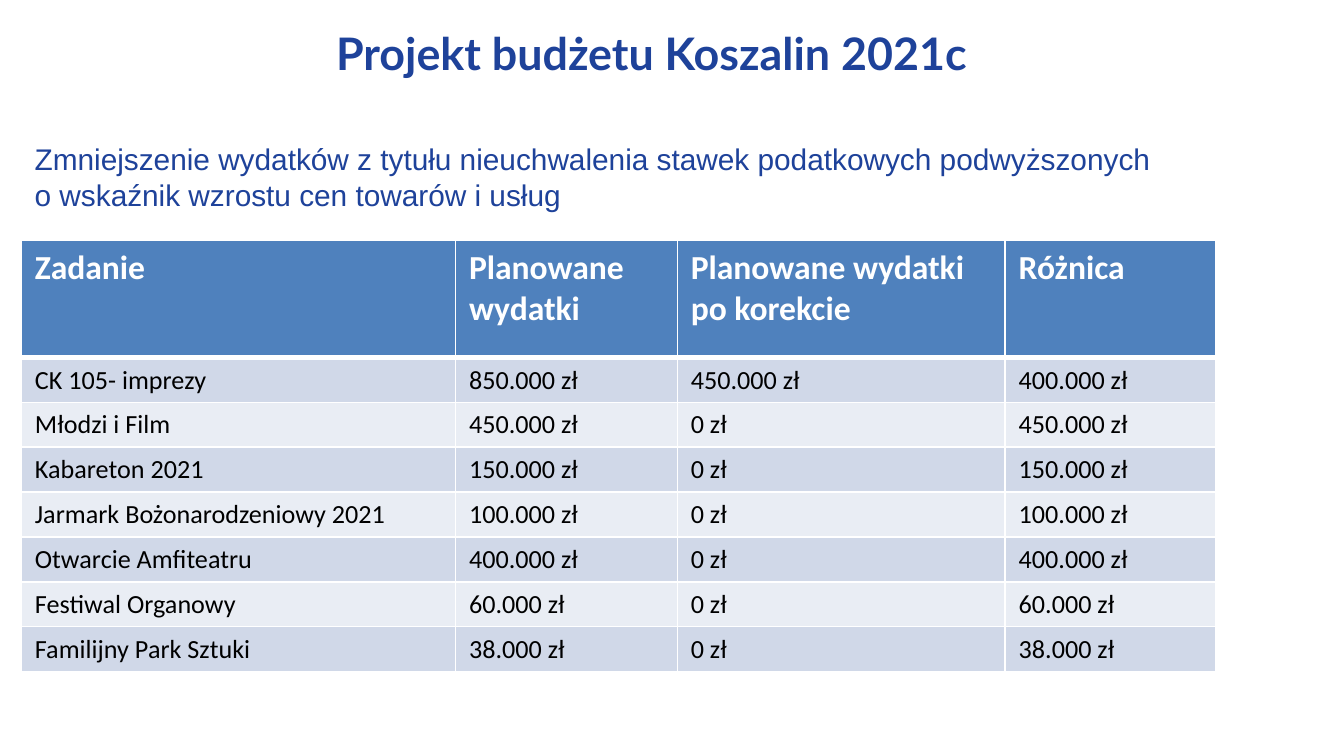
from lxml.etree import SubElement
from pptx import Presentation
from pptx.dml.color import RGBColor
from pptx.enum.text import MSO_ANCHOR as Anchor, MSO_AUTO_SIZE as AutoSize, PP_ALIGN as Align
from pptx.oxml.ns import qn
from pptx.util import Inches, Pt

NAVY = RGBColor(0x1E, 0x42, 0x9A)
BLUE = RGBColor(0x4F, 0x81, 0xBD)
BAND_DARK = RGBColor(0xD0, 0xD8, 0xE8)
BAND_LIGHT = RGBColor(0xE9, 0xED, 0xF4)
WHITE = RGBColor(0xFF, 0xFF, 0xFF)
BLACK = RGBColor(0, 0, 0)

TITLE_FORMAT = {"name": "Lato", "size": Pt(24), "bold": True, "color": NAVY}
SUBTITLE_FORMAT = {"name": "Arial", "size": Pt(16), "bold": False, "color": NAVY}
HEADER_FORMAT = {"name": "Calibri", "size": Pt(18), "bold": True, "color": WHITE}
BODY_FORMAT = {"name": "Calibri", "size": Pt(14), "bold": False, "color": BLACK}

COLUMN_WIDTHS = [3.23, 1.65, 2.44, 1.57]
HEADER_HEIGHT = 0.87
EXPENSES = [
    ("Zadanie", "Planowane wydatki", "Planowane wydatki po korekcie", "Różnica"),
    ("CK 105- imprezy", "850.000 zł", "450.000 zł", "400.000 zł"),
    ("Młodzi i Film", "450.000 zł", "0 zł", "450.000 zł"),
    ("Kabareton 2021", "150.000 zł", "0 zł", "150.000 zł"),
    ("Jarmark Bożonarodzeniowy 2021", "100.000 zł", "0 zł", "100.000 zł"),
    ("Otwarcie Amfiteatru", "400.000 zł", "0 zł", "400.000 zł"),
    ("Festiwal Organowy", "60.000 zł", "0 zł", "60.000 zł"),
    ("Familijny Park Sztuki", "38.000 zł", "0 zł", "38.000 zł"),
]


def write_text(text_frame, text, text_format):
    text_frame.text = text
    for paragraph in text_frame.paragraphs:
        paragraph.alignment = Align.LEFT
        for run in paragraph.runs:
            for attribute, value in text_format.items():
                if attribute == "color":
                    run.font.color.rgb = value
                else:
                    setattr(run.font, attribute, value)


def add_title(slide, left, top, width, height):
    title = slide.shapes.title
    title.left, title.top = Inches(left), Inches(top)
    title.width, title.height = Inches(width), Inches(height)
    write_text(title.text_frame, "Projekt budżetu Koszalin 2021c", TITLE_FORMAT)
    title.text_frame.word_wrap = True
    title.text_frame.vertical_anchor = Anchor.TOP
    title.text_frame.auto_size = AutoSize.SHAPE_TO_FIT_TEXT


def add_subtitle(slide, left, top, width, height):
    box = slide.shapes.add_textbox(Inches(left), Inches(top), Inches(width), Inches(height))
    box.text_frame.word_wrap = True
    write_text(
        box.text_frame,
        "Zmniejszenie wydatków z tytułu nieuchwalenia stawek podatkowych podwyższonych \v"
        "o wskaźnik wzrostu cen towarów i usług",
        SUBTITLE_FORMAT,
    )


def set_borders(cell, widths):
    properties = cell._tc.get_or_add_tcPr()
    for side, width in zip("LRTB", widths):
        line = SubElement(properties, qn(f"a:ln{side}"), w=str(Pt(width)))
        fill = SubElement(line, qn("a:solidFill"))
        SubElement(fill, qn("a:srgbClr"), val=str(WHITE))


def add_expense_table(slide, left, top, width, height):
    table = slide.shapes.add_table(
        len(EXPENSES), len(COLUMN_WIDTHS),
        Inches(left), Inches(top), Inches(width), Inches(height),
    ).table
    for column, column_width in zip(table.columns, COLUMN_WIDTHS):
        column.width = Inches(column_width)
    body_height = (height - HEADER_HEIGHT) / (len(EXPENSES) - 1)
    for row_index, values in enumerate(EXPENSES):
        is_header = row_index == 0
        table.rows[row_index].height = Inches(HEADER_HEIGHT if is_header else body_height)
        band = BAND_DARK if row_index % 2 else BAND_LIGHT
        top_width = 3 if row_index == 1 else 1
        bottom_width = 3 if is_header else 1
        for column_index, value in enumerate(values):
            cell = table.cell(row_index, column_index)
            write_text(cell.text_frame, value, HEADER_FORMAT if is_header else BODY_FORMAT)
            set_borders(cell, (1, 1, top_width, bottom_width))
            cell.fill.solid()
            cell.fill.fore_color.rgb = BLUE if is_header else band


def main():
    presentation = Presentation()
    presentation.slide_width = Inches(10)
    presentation.slide_height = presentation.slide_width * 9 // 16
    slide = presentation.slides.add_slide(presentation.slide_layouts.get_by_name("Title Only"))
    add_title(slide, 2.4, 0.14, 8.36, 0.5)
    add_subtitle(slide, 0.16, 1, 9.06, 1.04)
    add_expense_table(slide, 0.16, 1.79, 8.9, 3.2)
    presentation.save("out.pptx")


if __name__ == "__main__":
    main()
